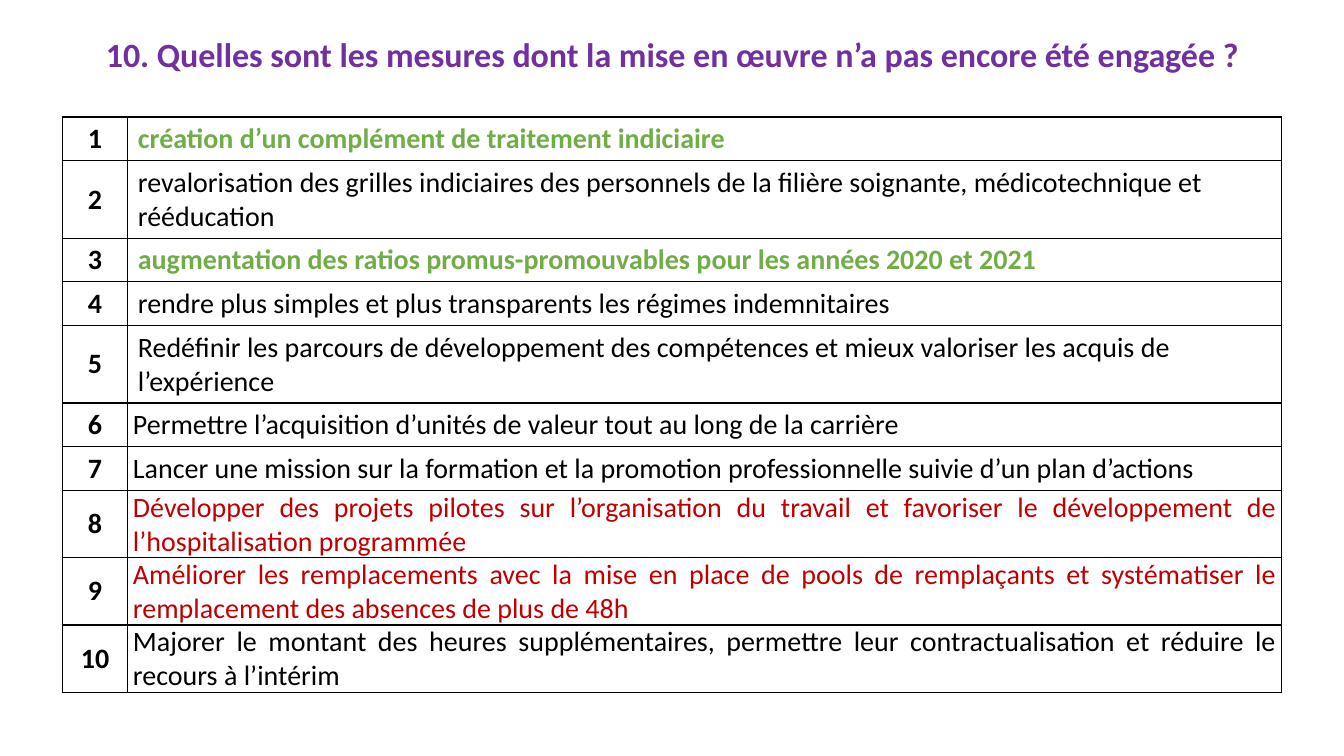
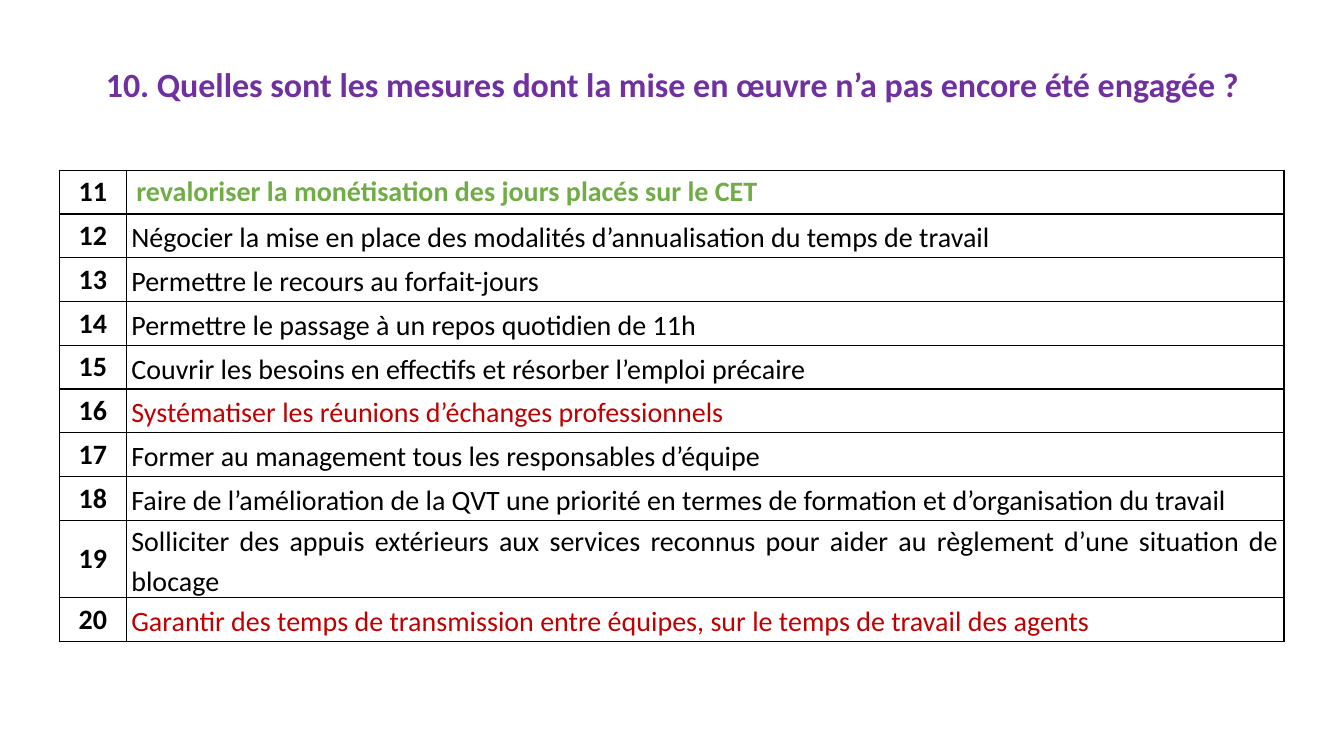
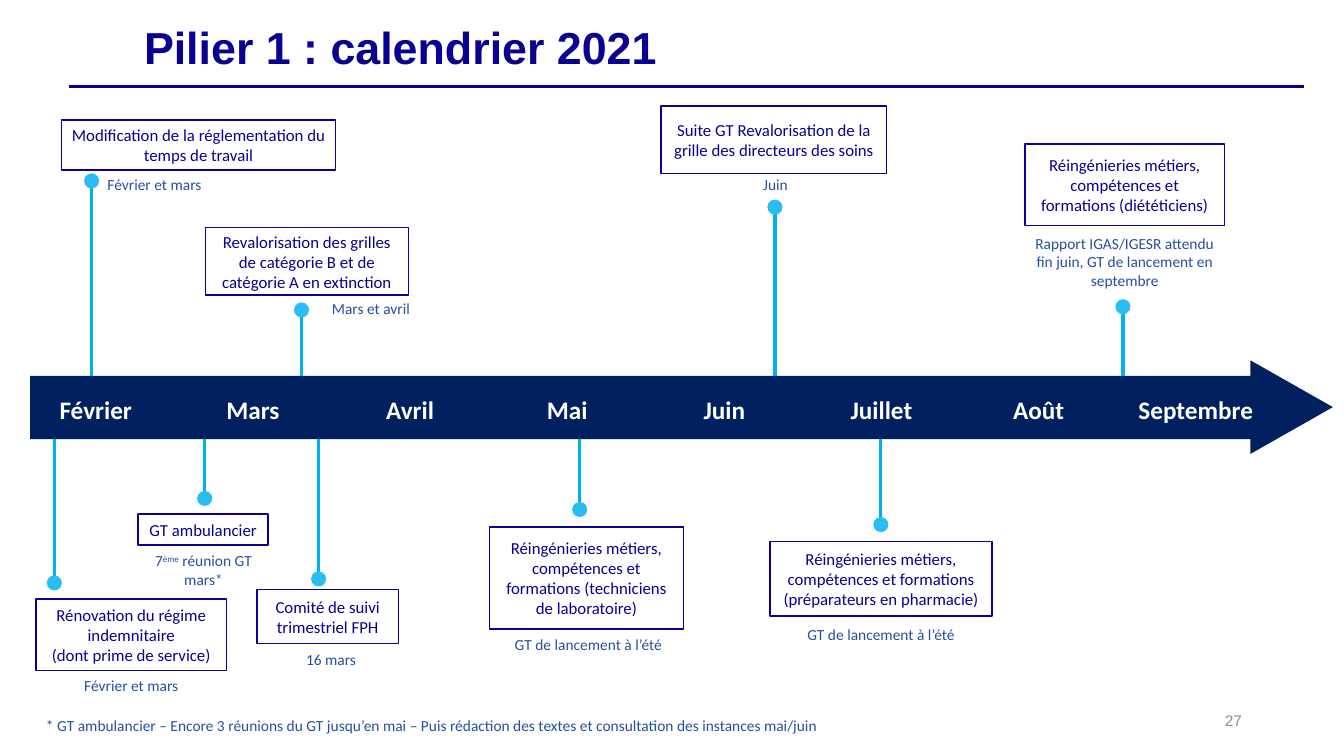
"""Build three slides: two tables of measures and the 2021 calendar."""
from lxml.etree import SubElement
from pptx import Presentation
from pptx.dml.color import RGBColor
from pptx.enum.shapes import MSO_CONNECTOR, MSO_SHAPE
from pptx.enum.text import MSO_ANCHOR, PP_ALIGN
from pptx.oxml.ns import qn
from pptx.util import Cm, Pt

BLACK, WHITE, GREEN, RED = "000000", "FFFFFF", "70AD47", "C00000"
PURPLE, INDIGO, NAVY = "7030A0", "0A0091", "002060"
SKY, DOT, BLUE, GREY = "00B0F0", "2ABDF2", "26509D", "8C8C8C"
QUESTION = "10. Quelles sont les mesures dont la mise en œuvre n’a pas encore été engagée ?"


def add_box(s, at, text="", size=12, color=INDIGO, bold=False, font="Calibri",
            align=PP_ALIGN.CENTER, anchor=MSO_ANCHOR.MIDDLE, spacing=None,
            kind=None, fill=None, line=None, pad=0.25):
    """Add a text box or a filled shape; text between ^ signs is superscript."""
    at = [Cm(v) for v in at]
    if kind is None:
        sp = s.shapes.add_textbox(*at)
    else:
        sp = s.shapes.add_shape(kind, *at)
        sp.shadow.inherit = False
        sp.fill.solid()
        sp.fill.fore_color.rgb = RGBColor.from_string(fill)
        if line:
            sp.line.color.rgb = RGBColor.from_string(line)
            sp.line.width = Pt(1)
        else:
            sp.line.fill.background()
    if text:
        tf = sp.text_frame
        tf.word_wrap = True
        tf.vertical_anchor = anchor
        tf.margin_left = tf.margin_right = Cm(pad)
        for i, part in enumerate(text.split("\n")):
            p = tf.add_paragraph() if i else tf.paragraphs[0]
            p.alignment = align
            p.line_spacing = spacing
            p.font.size, p.font.name, p.font.bold = Pt(size), font, bold
            p.font.color.rgb = RGBColor.from_string(color)
            for j, piece in enumerate(part.split("^")):
                r = p.add_run()
                r.text = piece
                if j % 2:
                    r.font._element.set("baseline", "30000")
    return sp


def add_line(s, x1, y1, x2, y2, color, width):
    """Add a straight line without shadow."""
    ln = s.shapes.add_connector(MSO_CONNECTOR.STRAIGHT, Cm(x1), Cm(y1), Cm(x2), Cm(y2))
    ln.line.color.rgb = RGBColor.from_string(color)
    ln.line.width = Pt(width)
    SubElement(ln._element.spPr, qn("a:effectLst"))


prs = Presentation()
prs.slide_width, prs.slide_height = Cm(33.87), Cm(19.05)
blank = prs.slide_layouts[6]

measures = [
    ("création d’un complément de traitement indiciaire", GREEN),
    ("revalorisation des grilles indiciaires des personnels de la filière soignante, "
     "médicotechnique et rééducation", BLACK),
    ("augmentation des ratios promus-promouvables pour les années 2020 et 2021", GREEN),
    ("rendre plus simples et plus transparents les régimes indemnitaires", BLACK),
    ("Redéfinir les parcours de développement des compétences et mieux valoriser "
     "les acquis de l’expérience", BLACK),
    ("Permettre l’acquisition d’unités de valeur tout au long de la carrière", BLACK),
    ("Lancer une mission sur la formation et la promotion professionnelle suivie "
     "d’un plan d’actions", BLACK),
    ("Développer des projets pilotes sur l’organisation du travail et favoriser "
     "le développement de l’hospitalisation programmée", RED),
    ("Améliorer les remplacements avec la mise en place de pools de remplaçants et "
     "systématiser le remplacement des absences de plus de 48h", RED),
    ("Majorer le montant des heures supplémentaires, permettre leur "
     "contractualisation et réduire le recours à l’intérim", BLACK),
    ("revaloriser la monétisation des jours placés sur le CET", GREEN),
    ("Négocier la mise en place des modalités d’annualisation du temps de travail", BLACK),
    ("Permettre le recours au forfait-jours", BLACK),
    ("Permettre le passage à un repos quotidien de 11h", BLACK),
    ("Couvrir les besoins en effectifs et résorber l’emploi précaire", BLACK),
    ("Systématiser les réunions d’échanges professionnels", RED),
    ("Former au management tous les responsables d’équipe", BLACK),
    ("Faire de l’amélioration de la QVT une priorité en termes de formation et "
     "d’organisation du travail", BLACK),
    ("Solliciter des appuis extérieurs aux services reconnus pour aider au règlement "
     "d’une situation de blocage", BLACK),
    ("Garantir des temps de transmission entre équipes, sur le temps de travail "
     "des agents", RED),
]

pages = [
    (0, 0.66, 1.57, 2.95, (1.65, 29.08), 5, None, 2, 6),
    (10, 1.42, 1.5, 4.29, (1.68, 29.18), 1, 1.15, 5, 10),
]
for start, title_y, x, y, widths, plain_rows, spacing, before, after in pages:
    s = prs.slides.add_slide(blank)
    add_box(s, (2.34, title_y, 29.21, 1.52), QUESTION, 24.3, PURPLE, True, spacing=0.9)
    rows = measures[start:start + 10]
    tbl = s.shapes.add_table(len(rows), 2, Cm(x), Cm(y), Cm(sum(widths)),
                             Cm(1.04 * len(rows))).table
    tbl.first_row = tbl.horz_banding = False
    for col, width in zip(tbl.columns, widths):
        col.width = Cm(width)
    for i, (text, color) in enumerate(rows):
        tbl.rows[i].height = Cm(1.04)
        number, measure = tbl.cell(i, 0), tbl.cell(i, 1)
        for cell, value, ink, bold in ((number, str(start + i + 1), BLACK, True),
                                       (measure, text, color, color == GREEN)):
            cell.text = value
            cell.fill.background()
            p = cell.text_frame.paragraphs[0]
            p.font.size, p.font.name, p.font.bold = Pt(20), "Calibri", bold
            p.font.color.rgb = RGBColor.from_string(ink)
            tcPr = cell._tc.get_or_add_tcPr()
            for k, side in enumerate(("lnL", "lnR", "lnT", "lnB")):
                ln = tcPr.makeelement(qn(f"a:{side}"), {"w": "12700"})
                SubElement(SubElement(ln, qn("a:solidFill")), qn("a:srgbClr"), val=BLACK)
                tcPr.insert(k, ln)
        number.vertical_anchor = MSO_ANCHOR.MIDDLE
        number.text_frame.paragraphs[0].alignment = PP_ALIGN.CENTER
        if i >= plain_rows:
            measure.vertical_anchor = MSO_ANCHOR.MIDDLE
            measure.margin_left = measure.margin_right = Cm(0.13)
            measure.margin_top = measure.margin_bottom = Cm(0)
            p = measure.text_frame.paragraphs[0]
            p.alignment = PP_ALIGN.JUSTIFY
            p.line_spacing = spacing
            p.space_before, p.space_after = Pt(before), Pt(after)

s = prs.slides.add_slide(blank)
add_box(s, (23.93, 17.65, 7.62, 1.02), "27", 11, GREY, font="Arial", align=PP_ALIGN.RIGHT)
add_box(s, (3.38, 0.56, 29.21, 1.4), "Pilier 1 : calendrier 2021", 32, INDIGO, True,
        "Arial", PP_ALIGN.LEFT, spacing=0.9)
add_line(s, 1.73, 2.18, 32.87, 2.18, INDIGO, 1.75)

bar_top, bar_height = 9.47, 1.6
add_box(s, (0.76, bar_top, 31.06, bar_height), kind=MSO_SHAPE.RECTANGLE, fill=NAVY)
head = add_box(s, (31.37, 9.22, 2.36, 2.08), kind=MSO_SHAPE.ISOSCELES_TRIANGLE, fill=NAVY)
head.rotation = 90
months = ("Février", "Mars", "Avril", "Mai", "Juin", "Juillet", "Août", "Septembre")
for i, month in enumerate(months):
    add_box(s, (-0.53 + 3.96 * i, 9.65, 5.89, 1.32), month, 18, WHITE, True)

events = [
    (2.31, 4.56, (1.55, 3.02, 6.91, 1.27), 0,
     "Modification de la réglementation du temps de travail",
     (1.8, 4.29, 4.19, 0.48), "Février et mars"),
    (7.6, 7.81, (5.18, 5.74, 5.11, 1.7), 0.25,
     "Revalorisation des grilles de catégorie B et de catégorie A en extinction",
     (6.71, 7.42, 5.28, 0.61), "Mars et avril"),
    (19.53, 5.22, (16.66, 2.67, 5.69, 1.7), 0,
     "Suite GT Revalorisation de la grille des directeurs des soins",
     (17.45, 4.29, 4.19, 0.48), "Juin"),
    (28.3, 7.73, (25.83, 3.63, 5.03, 2.06), 0.25,
     "Réingénieries métiers, compétences et formations (diététiciens)",
     (25.83, 5.77, 5.03, 2.06),
     "Rapport IGAS/IGESR attendu fin juin, GT de lancement en septembre"),
    (1.37, 14.69, (0.91, 15.09, 4.8, 1.8), 0.25,
     "Rénovation du régime indemnitaire\n(dont prime de service)",
     (0.91, 16.92, 4.8, 0.71), "Février et mars"),
    (5.16, 12.56, (3.48, 12.95, 3.28, 0.79), 0.25, "GT ambulancier",
     (3.35, 13.77, 3.56, 0.74), "7^ème^ réunion GT mars*"),
    (8.03, 14.59, (6.48, 14.86, 3.56, 1.35), 0.25, "Comité de suivi trimestriel FPH",
     (6.25, 16.26, 4.19, 0.48), "16 mars"),
    (14.61, 12.84, (12.34, 13.28, 4.88, 2.57), 0.25,
     "Réingénieries métiers, compétences et formations (techniciens de laboratoire)",
     (12.29, 15.88, 5.08, 0.48), "GT de lancement à l’été"),
    (22.2, 13.22, (19.41, 13.64, 5.59, 1.88), 0.25,
     "Réingénieries métiers, compétences et formations (préparateurs en pharmacie)",
     (19.41, 15.62, 5.59, 0.79), "GT de lancement à l’été"),
]
dot = 0.38
for x, y, box_at, pad, event, date_at, date in events:
    edge = bar_top if y < bar_top else bar_top + bar_height
    add_line(s, x, edge, x, y, SKY, 2.25)
    add_box(s, (x - dot / 2, y - dot / 2, dot, dot), kind=MSO_SHAPE.OVAL, fill=DOT)
    add_box(s, box_at, event, kind=MSO_SHAPE.RECTANGLE, fill=WHITE, line=INDIGO, pad=pad)
    add_box(s, date_at, date, 11, BLUE, anchor=MSO_ANCHOR.TOP)

add_box(s, (0.91, 17.93, 29.16, 0.76),
        "* GT ambulancier – Encore 3 réunions du GT jusqu’en mai – Puis rédaction des "
        "textes et consultation des instances mai/juin",
        11, BLUE, align=PP_ALIGN.LEFT, anchor=MSO_ANCHOR.TOP)

prs.save("out.pptx")
